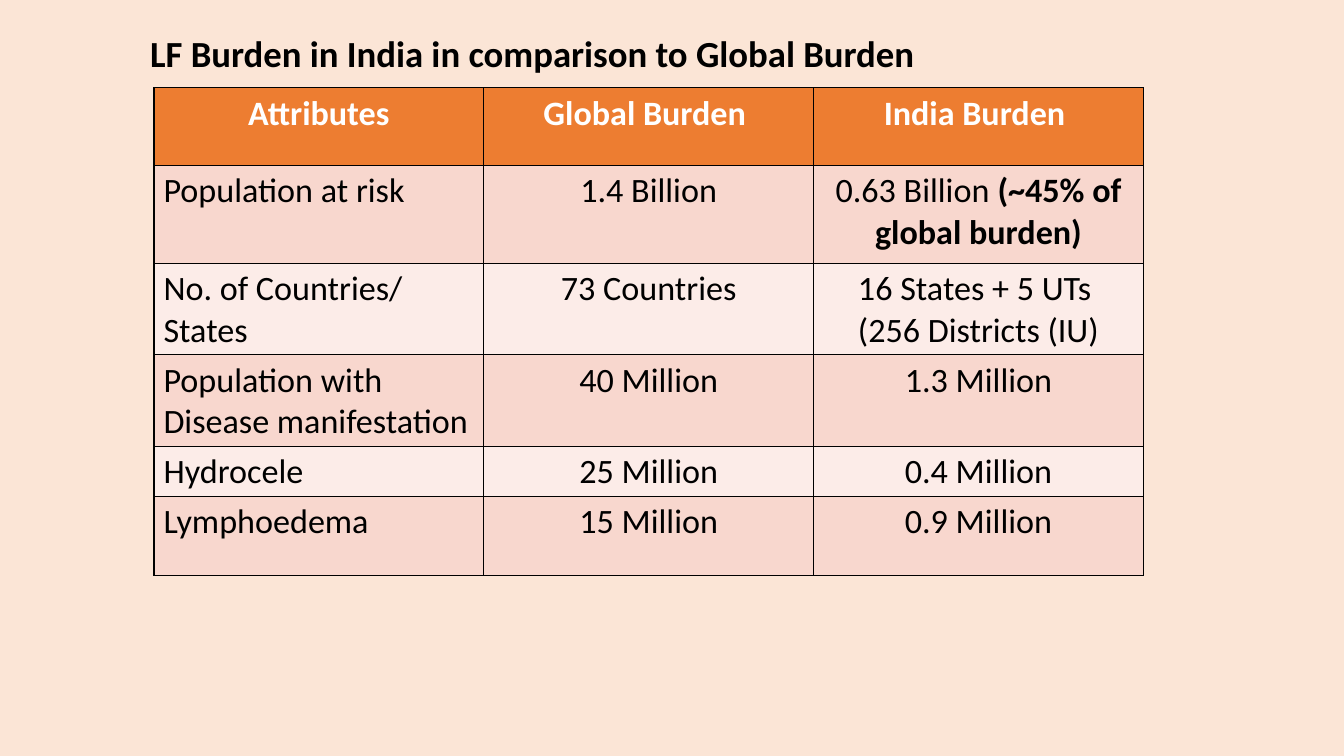
import pptx
import pptx.dml.color
import pptx.enum.text
import pptx.oxml
import pptx.oxml.ns
import pptx.util
from pptx.util import Inches

RGBColor = pptx.dml.color.RGBColor
ALIGN = pptx.enum.text.PP_ALIGN

BLACK = RGBColor(0x00, 0x00, 0x00)
WHITE = RGBColor(0xFF, 0xFF, 0xFF)
CREAM = RGBColor(0xFB, 0xE5, 0xD6)
ORANGE = RGBColor(0xED, 0x7D, 0x31)
BANDS = RGBColor(0xFC, 0xEC, 0xE8), RGBColor(0xF8, 0xD7, 0xCE)

# A line break in a cell starts a new paragraph; "|" starts a bold run.
ROWS = [
    ("Attributes", "Global Burden ", "India Burden "),
    ("Population at risk", "1.4 Billion", "0.63 Billion |(~45% of global burden)"),
    ("No. of Countries/ States", "73 Countries", "16 States + 5 UTs \n(256 Districts (IU)"),
    ("Population with Disease manifestation", "40 Million", "1.3 Million"),
    ("Hydrocele", "25 Million", "0.4 Million"),
    ("Lymphoedema", "15 Million", "0.9 Million"),
]
HEIGHTS = [0.82, 1.04, 0.92, 0.95, 0.48, 0.83]
WIDTH = 3.49


class Deck:
    def __init__(self, slide, face="Calibri"):
        self.slide = slide
        self.face = face

    def paint(self, color):
        fill = self.slide.background.fill
        fill.solid()
        fill.fore_color.rgb = color

    def font(self, para, size, color, bold):
        font = para.font
        font.name = self.face
        font.size = pptx.util.Pt(size)
        font.color.rgb = color
        font.bold = bold

    def title(self, text, left, top, width, height):
        frame = self.slide.shapes.add_textbox(
            Inches(left), Inches(top), Inches(width), Inches(height)).text_frame
        frame.word_wrap = True
        frame.vertical_anchor = pptx.enum.text.MSO_ANCHOR.MIDDLE
        para = frame.paragraphs[0]
        para.text = text
        para.line_spacing = 0.9
        self.font(para, 28, BLACK, True)

    def border(self, cell):
        """Draw a thin black line on all four sides of a cell."""
        props = cell._tc.get_or_add_tcPr()
        for side in ("lnL", "lnR", "lnT", "lnB"):
            props.append(pptx.oxml.parse_xml(
                f'<a:{side} {pptx.oxml.ns.nsdecls("a")} w="12700"><a:solidFill>'
                f'<a:srgbClr val="{BLACK}"/></a:solidFill></a:{side}>'))

    def cell(self, cell, text, fill, color, bold, align):
        self.border(cell)
        cell.fill.solid()
        cell.fill.fore_color.rgb = fill
        frame = cell.text_frame
        for i, line in enumerate(text.split("\n")):
            para = frame.add_paragraph() if i else frame.paragraphs[0]
            para.alignment = align
            for j, part in enumerate(line.split("|")):
                run = para.add_run()
                run.text = part
                if j:
                    run.font.bold = True
            self.font(para, 26, color, bold)

    def table(self, rows, left, top, width, heights):
        count = len(rows[0])
        grid = self.slide.shapes.add_table(
            len(rows), count, Inches(left), Inches(top),
            Inches(width * count), Inches(sum(heights))).table
        for col in grid.columns:
            col.width = Inches(width)
        for r, texts in enumerate(rows):
            grid.rows[r].height = Inches(heights[r])
            head = r == 0
            fill = ORANGE if head else BANDS[r % 2]
            for c, text in enumerate(texts):
                align = ALIGN.CENTER if head or c else ALIGN.LEFT
                self.cell(grid.cell(r, c), text, fill,
                          WHITE if head else BLACK, head, align)


def main():
    show = pptx.Presentation()
    show.slide_width = Inches(14.22)
    show.slide_height = Inches(8)
    deck = Deck(show.slides.add_slide(show.slide_layouts[6]))
    deck.paint(CREAM)
    deck.title("LF Burden in India in comparison to Global Burden",
               1.49, 0.12, 11.24, 0.93)
    deck.table(ROWS, 1.63, 0.93, WIDTH, HEIGHTS)
    show.save("out.pptx")


if __name__ == "__main__":
    main()
